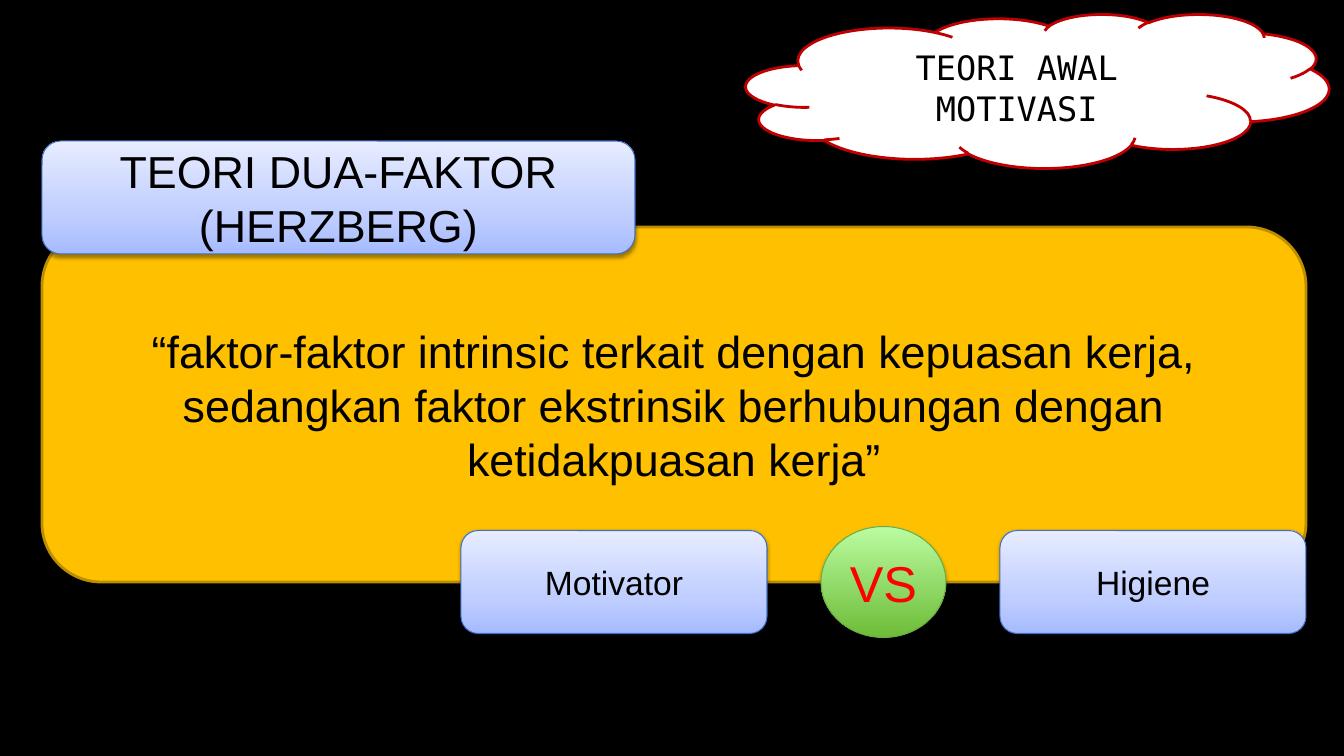
from lxml import etree
from pptx import Presentation
from pptx import util as u
from pptx.dml.color import RGBColor
from pptx.enum import shapes, text
from pptx.oxml.ns import nsdecls, qn

KIND = shapes.MSO_SHAPE
BLACK = RGBColor(0, 0, 0)
WHITE = RGBColor(255, 255, 255)
RED = RGBColor(255, 0, 0)
CRIMSON = RGBColor(0xC0, 0, 0)
GOLD = RGBColor(0xFF, 0xC0, 0)
OCHRE = RGBColor(0xBD, 0x8E, 0)
NAVY = RGBColor(0x3F, 0x6F, 0xC3)
GREEN = RGBColor(0x6D, 0xAC, 0x43)

# Gradient stops run from the bottom edge to the top edge: (percent, colour)
BLUES = [(0, RGBColor(0xA6, 0xBB, 0xFF)), (35, RGBColor(0xC0, 0xCE, 0xFF)),
         (100, RGBColor(0xE7, 0xEC, 0xFF))]
GREENS = [(0, RGBColor(0x6D, 0xBC, 0x38)), (100, RGBColor(0xBB, 0xFC, 0xA0))]

# Look: fill, line colour, line width, shadow (opacity percent, distance pt)
CLOUD = (WHITE, CRIMSON, 2, None)
PANEL = (GOLD, OCHRE, 2, None)
CARD = (BLUES, NAVY, 0.75, (38, 1.6))
BADGE = (GREENS, GREEN, 0.75, (35, 1.8))

SANS, MONO = "Arial", "DejaVu Sans Mono"
QUOTE = ("“faktor-faktor intrinsic terkait dengan kepuasan kerja, "
         "sedangkan faktor ekstrinsik berhubungan dengan ketidakpuasan kerja”")

# Kind, box in px, look, words, font, size, colour
MAIN = [
    (KIND.CLOUD, (746, 14, 583, 154), CLOUD, "TEORI AWAL MOTIVASI", MONO, 24, BLACK),
    (KIND.ROUNDED_RECTANGLE, (42, 227, 1264, 355), PANEL, QUOTE, SANS, 32, BLACK),
    (KIND.ROUNDED_RECTANGLE, (42, 141, 593, 113), CARD,
     "TEORI DUA-FAKTOR (HERZBERG)", SANS, 32, BLACK),
]
# Kind, size in px, look, words, size, colour
DUEL = [
    (KIND.ROUNDED_RECTANGLE, (306, 103), CARD, "Motivator", 24, BLACK),
    (KIND.OVAL, (125, 111), BADGE, "VS", 36, RED),
    (KIND.ROUNDED_RECTANGLE, (306, 103), CARD, "Higiene", 24, BLACK),
]
DUEL_LEFT, DUEL_MID, DUEL_GAP = 461, 582, 54


def px(n):
    return u.Emu(round(n * 914400 / 100.8))


def blend(fill, stops):
    """Fill with any number of gradient stops, rising upwards."""
    fill.gradient()
    fill.gradient_angle = 90
    row = fill.gradient_stops[0]._gs.getparent()
    for old in list(row):
        row.remove(old)
    for spot, tint in stops:
        stop = etree.SubElement(row, qn("a:gs"), pos=str(spot * 1000))
        etree.SubElement(stop, qn("a:srgbClr"), val=str(tint))


def shade(shape, alpha, dist):
    """Drop a soft black shadow straight down."""
    old = shape._element.spPr.find(qn("a:effectLst"))
    old.append(etree.fromstring(
        f'<a:outerShdw {nsdecls("a")} blurRad="{u.Pt(3.1)}" dist="{u.Pt(dist)}" '
        f'dir="5400000" rotWithShape="0"><a:srgbClr val="000000">'
        f'<a:alpha val="{alpha * 1000}"/></a:srgbClr></a:outerShdw>'))


def draw(host, kind, box, look, words, font, size, ink):
    paint, edge, width, shadow = look
    shape = host.add_shape(kind, *map(px, box))
    if isinstance(paint, list):
        blend(shape.fill, paint)
    else:
        shape.fill.solid()
        shape.fill.fore_color.rgb = paint
    shape.line.color.rgb = edge
    shape.line.width = u.Pt(width)
    shape.shadow.inherit = False
    if shadow:
        shade(shape, *shadow)
    frame = shape.text_frame
    frame.word_wrap = True
    frame.vertical_anchor = text.MSO_ANCHOR.MIDDLE
    para = frame.paragraphs[0]
    para.alignment = text.PP_ALIGN.CENTER
    run = para.add_run()
    run.text = words
    run.font.name = font
    run.font.size = u.Pt(size)
    run.font.color.rgb = ink


def main():
    deck = Presentation()
    deck.slide_width, deck.slide_height = px(1344), px(756)
    slide = deck.slides.add_slide(deck.slide_layouts[6])
    slide.background.fill.solid()
    slide.background.fill.fore_color.rgb = BLACK

    for item in MAIN:
        draw(slide.shapes, *item)

    boxes, left = [], DUEL_LEFT
    for _, (wide, high), *_ in DUEL:
        boxes.append((left, DUEL_MID - high / 2, wide, high))
        left += wide + DUEL_GAP
    group = slide.shapes.add_group_shape()
    for i in (0, 2, 1):  # the badge lies on top
        kind, _, look, words, size, ink = DUEL[i]
        draw(group.shapes, kind, boxes[i], look, words, SANS, size, ink)

    deck.save("out.pptx")


if __name__ == "__main__":
    main()
